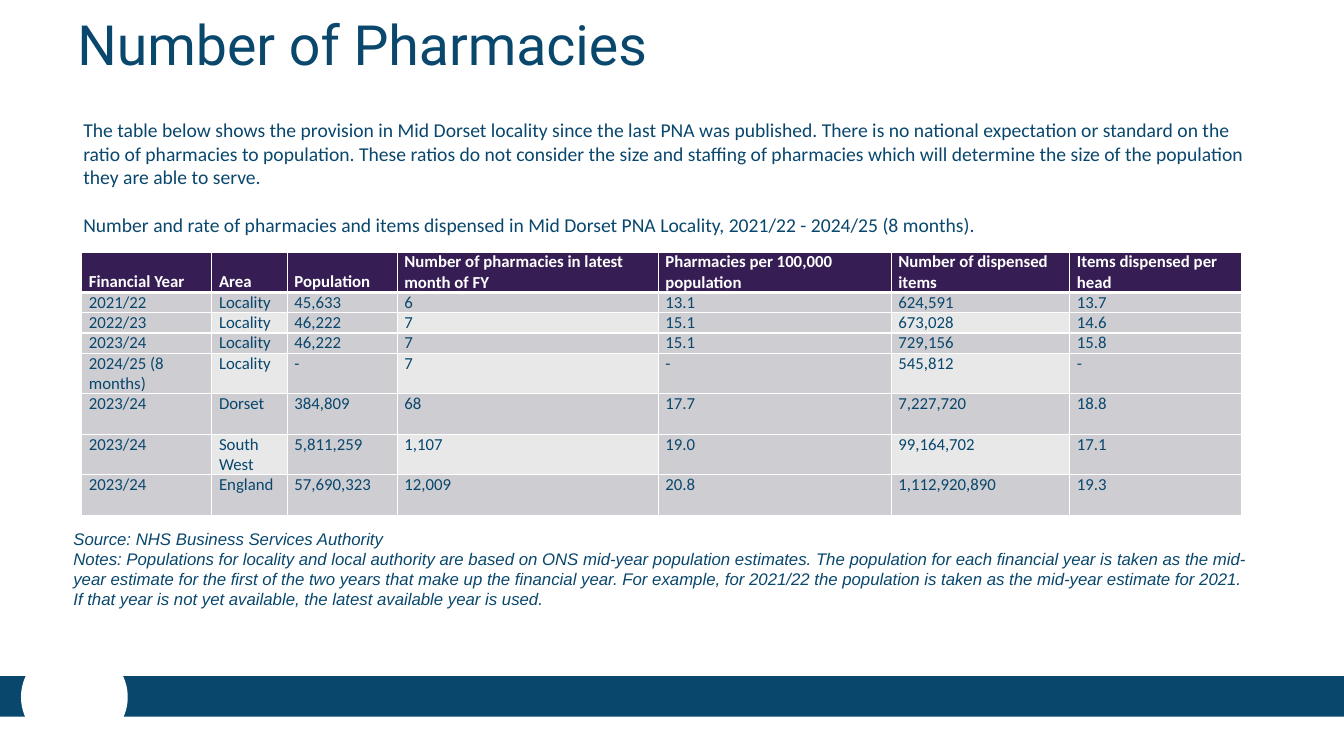
from dataclasses import dataclass
from lxml.etree import SubElement as Sub
from pptx import Presentation as Deck
from pptx.dml.color import RGBColor as Rgb
from pptx.enum.shapes import MSO_SHAPE as Kind
from pptx.enum.text import MSO_ANCHOR as Anchor, MSO_AUTO_SIZE as Auto
from pptx.oxml.ns import qn
from pptx.util import Cm, Pt

HUES = {"blue": "09476D", "white": "FFFFFF", "plum": "361E54",
        "grey": "CECDD1", "pale": "E8E8E9"}


@dataclass
class Box:
    left: float
    top: float
    width: float
    height: float

    def place(self) -> list:
        return [Cm(n) for n in (self.left, self.top, self.width, self.height)]


@dataclass
class Form:
    kind: Kind
    box: Box
    hue: str


@dataclass
class Font:
    name: str
    size: float
    hue: str = "blue"
    bold: bool = False
    slant: bool = False


@dataclass
class Note:
    box: Box
    font: Font
    lines: list[str]
    gap: float = 0
    pitch: float = 1
    grow: bool = True


FORMS = [
    Form(Kind.RECTANGLE, Box(0, 17.04, 33.87, 1.02), "blue"),
    Form(Kind.OVAL, Box(0.53, 16.28, 2.69, 2.57), "white"),
]

NOTES = [
    Note(Box(1.85, 2.84, 30.15, 3.25), Font("Calibri", 14), [
        "The table below shows the provision in Mid Dorset locality since the last PNA was published. "
        "There is no national expectation or standard on the ratio of pharmacies to population. "
        "These ratios do not consider the size and staffing of pharmacies which will determine "
        "the size of the population they are able to serve.",
        "Number and rate of pharmacies and items dispensed in Mid Dorset PNA Locality, "
        "2021/22 - 2024/25 (8 months).",
    ], gap=17),
    Note(Box(1.6, 13.18, 30.15, 2.31), Font("Arial", 12, slant=True), [
        "Source: NHS Business Services Authority",
        "Notes: Populations for locality and local authority are based on ONS mid-year population "
        "estimates. The population for each financial year is taken as the mid-year estimate for the "
        "first of the two years that make up the financial year. For example, for 2021/22 the "
        "population is taken as the mid-year estimate for 2021. If that year is not yet available, "
        "the latest available year is used.",
    ]),
    Note(Box(1.7, 0.3, 21.59, 1.8), Font("Roboto", 39.6), ["Number of Pharmacies"],
         pitch=0.9, grow=False),
]

WIDTHS = [3.28, 1.9, 2.77, 6.58, 5.87, 4.5, 4.32]
TALLS = [1.02] + [0.51] * 3 + [1.02] * 4
ROWS = [
    ["Financial Year", "Area", "Population", "Number of pharmacies in latest month of FY",
     "Pharmacies per 100,000 population", "Number of dispensed items", "Items dispensed per head"],
    ["2021/22", "Locality", "45,633", "6", "13.1", "624,591", "13.7"],
    ["2022/23", "Locality", "46,222", "7", "15.1", "673,028", "14.6"],
    ["2023/24", "Locality", "46,222", "7", "15.1", "729,156", "15.8"],
    ["2024/25 (8 months)", "Locality", "-", "7", "-", "545,812", "-"],
    ["2023/24", "Dorset", "384,809", "68", "17.7", "7,227,720", "18.8"],
    ["2023/24", "South West", "5,811,259", "1,107", "19.0", "99,164,702", "17.1"],
    ["2023/24", "England", "57,690,323", "12,009", "20.8", "1,112,920,890", "19.3"],
]


def tint(hue: str) -> Rgb:
    return Rgb.from_string(HUES[hue])


def style(para, font: Font) -> None:
    for run in para.runs:
        face = run.font
        face.name, face.size = font.name, Pt(font.size)
        face.bold, face.italic = font.bold, font.slant
        face.color.rgb = tint(font.hue)


def add_form(slide, form: Form) -> None:
    shape = slide.shapes.add_shape(form.kind, *form.box.place())
    shape.shadow.inherit = False
    shape.fill.solid()
    shape.fill.fore_color.rgb = tint(form.hue)
    shape.line.fill.background()


def add_note(slide, note: Note) -> None:
    frame = slide.shapes.add_textbox(*note.box.place()).text_frame
    frame.word_wrap = True
    frame.vertical_anchor = Anchor.MIDDLE
    frame.auto_size = Auto.SHAPE_TO_FIT_TEXT if note.grow else Auto.NONE
    frame.text = "\n".join(note.lines)
    for spot, para in enumerate(frame.paragraphs):
        para.line_spacing = note.pitch
        if spot:
            para.space_before = Pt(note.gap)
        style(para, note.font)


def add_edge(cell, side: str, width: float, spot: int) -> None:
    props = cell._tc.get_or_add_tcPr()
    line = Sub(props, qn(f"a:ln{side}"), w=str(Pt(width)))
    Sub(Sub(line, qn("a:solidFill")), qn("a:srgbClr"), val=HUES["white"])
    props.insert(spot, line)


def fill_cell(cell, text: str, row: int, col: int) -> None:
    head = row == 0
    cell.text_frame.text = text
    style(cell.text_frame.paragraphs[0],
          Font("Calibri", 12, "white" if head else "blue", bold=head))
    cell.vertical_anchor = Anchor.BOTTOM if head else Anchor.TOP
    cell.margin_left = cell.margin_right = Cm(0.18)
    cell.margin_top = cell.margin_bottom = 0
    light = row % 2 == 0 and col % 2 == 1
    cell.fill.solid()
    cell.fill.fore_color.rgb = tint("plum" if head else "pale" if light else "grey")
    for spot, side in enumerate("LRTB"):
        thick = (head and side == "B") or (row == 1 and side == "T")
        add_edge(cell, side, 3 if thick else 1, spot)


def add_grid(slide) -> None:
    box = Box(2.06, 6.35, sum(WIDTHS), sum(TALLS))
    grid = slide.shapes.add_table(len(ROWS), len(WIDTHS), *box.place()).table
    grid.horz_banding = False
    grid.first_row = False
    for col, width in zip(grid.columns, WIDTHS):
        col.width = Cm(width)
    for row, tall in zip(grid.rows, TALLS):
        row.height = Cm(tall)
    for row, texts in enumerate(ROWS):
        for col, text in enumerate(texts):
            fill_cell(grid.cell(row, col), text, row, col)


def main() -> None:
    deck = Deck()
    deck.slide_width, deck.slide_height = Cm(33.87), Cm(19.05)
    slide = deck.slides.add_slide(deck.slide_layouts[6])
    for form in FORMS:
        add_form(slide, form)
    for note in NOTES:
        add_note(slide, note)
    add_grid(slide)
    deck.save("out.pptx")


if __name__ == "__main__":
    main()
